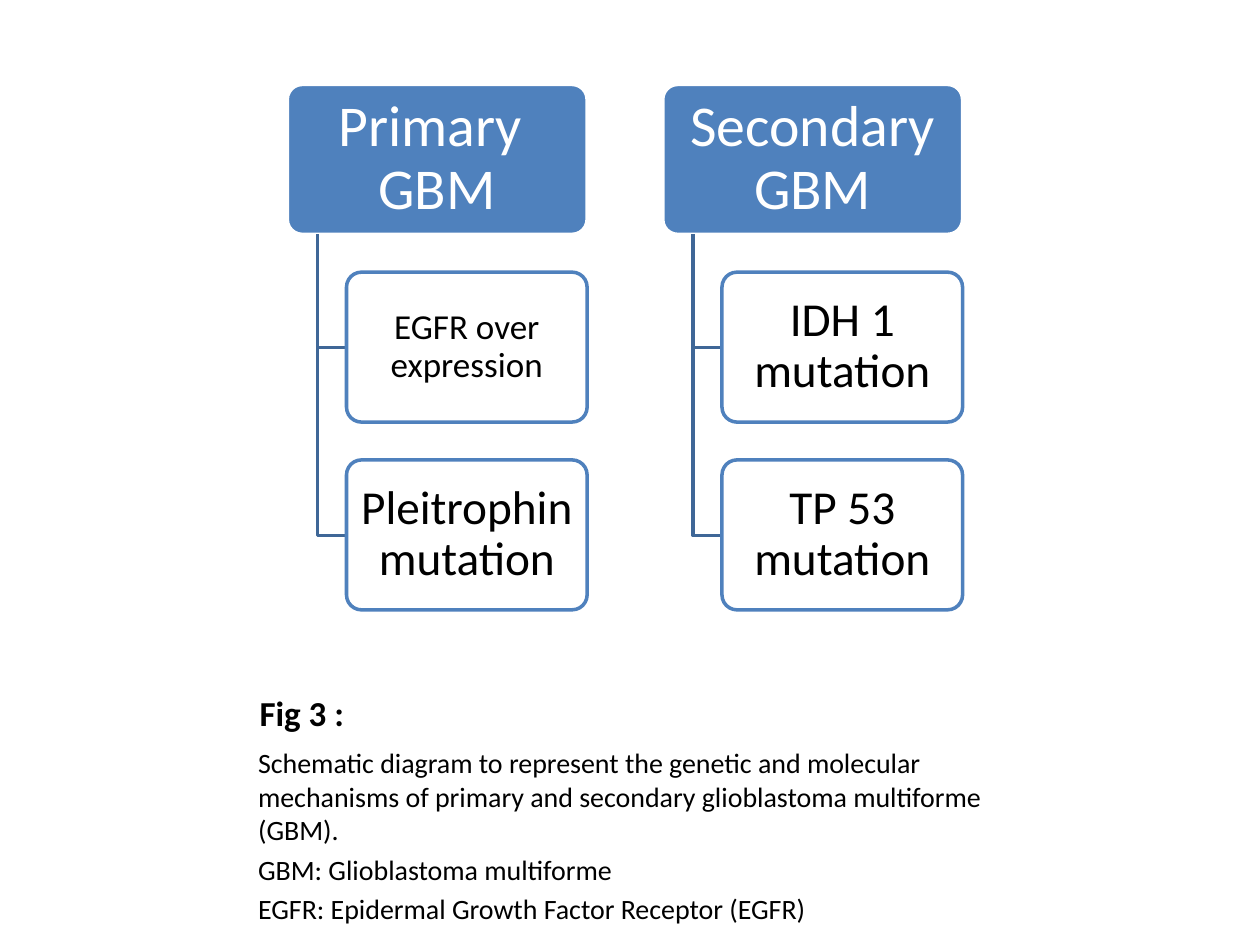
from pptx import Presentation
from pptx.dml.color import RGBColor
from pptx.enum.shapes import MSO_SHAPE
from pptx.enum.text import MSO_ANCHOR, MSO_AUTO_SIZE, PP_ALIGN
from pptx.util import Emu, Pt

BLUE, DARK_BLUE, WHITE, BLACK = "4F81BD", "3F6797", "FFFFFF", "000000"
BRANCHES = [
    (" Primary GBM", [("EGFR over expression", 20), ("Pleitrophin mutation", 27)]),
    ("Secondary GBM", [("IDH 1 mutation", 27), ("TP 53 mutation", 27)]),
]
CAPTION = [
    "Schematic diagram to represent the genetic and molecular mechanisms of "
    "primary and secondary glioblastoma multiforme (GBM).",
    "GBM: Glioblastoma multiforme",
    "EGFR: Epidermal Growth Factor Receptor (EGFR)",
]


def px(n):
    return Emu(n * 9144)


def rgb(value):
    return RGBColor.from_string(value)


class Deck:
    """Holds the style and the current slide, and adds each kind of element."""

    font = "Calibri"
    line_width = Pt(2)

    def __init__(self, width, height):
        self.prs = Presentation()
        self.prs.slide_width, self.prs.slide_height = px(width), px(height)
        self.s = self.prs.slides.add_slide(self.prs.slide_layouts[5])

    def run(self, p, text, size, color, bold=False):
        r = p.add_run()
        r.text = text
        r.font.name, r.font.size, r.font.bold = self.font, Pt(size), bold
        r.font.color.rgb = rgb(color)

    def title(self, x, y, w, h, text, size):
        sp = self.s.shapes.title
        sp.left, sp.top, sp.width, sp.height = px(x), px(y), px(w), px(h)
        tf = sp.text_frame
        tf.word_wrap, tf.auto_size = True, MSO_AUTO_SIZE.NONE
        tf.vertical_anchor = MSO_ANCHOR.BOTTOM
        p = tf.paragraphs[0]
        p.alignment = PP_ALIGN.LEFT
        self.run(p, text, size, BLACK, bold=True)

    def caption(self, x, y, w, h, lines, size):
        tf = self.s.shapes.add_textbox(px(x), px(y), px(w), px(h)).text_frame
        tf.word_wrap = True
        for i, line in enumerate(lines):
            p = tf.add_paragraph() if i else tf.paragraphs[0]
            p.space_before = Pt(size * 0.2)
            self.run(p, line, size, BLACK)

    def box(self, x, y, w, h, text, size, fill, line, color):
        sp = self.s.shapes.add_shape(
            MSO_SHAPE.ROUNDED_RECTANGLE, px(x), px(y), px(w), px(h))
        sp.adjustments[0] = 0.1
        sp.shadow.inherit = False
        sp.fill.solid()
        sp.fill.fore_color.rgb = rgb(fill)
        sp.line.color.rgb, sp.line.width = rgb(line), self.line_width
        tf = sp.text_frame
        tf.word_wrap, tf.vertical_anchor = True, MSO_ANCHOR.MIDDLE
        tf.margin_left = tf.margin_right = px(5)
        tf.margin_top = tf.margin_bottom = px(4)
        p = tf.paragraphs[0]
        p.alignment, p.line_spacing = PP_ALIGN.CENTER, 0.9
        p._p.get_or_add_pPr().set("rtl", "1")
        self.run(p, text, size, color)

    def elbow(self, x, y, w, h):
        builder = self.s.shapes.build_freeform(px(x), px(y))
        builder.add_line_segments(
            [(px(x), px(y + h)), (px(x + w), px(y + h))], close=False)
        sp = builder.convert_to_shape()
        sp.shadow.inherit = False
        sp.fill.background()
        sp.line.color.rgb, sp.line.width = rgb(DARK_BLUE), self.line_width

    def branch(self, x, y, heading, children):
        w, h, pitch, indent, stem = 238, 119, 149, 47, 24
        self.box(x, y, w, h, heading, 33, BLUE, WHITE, WHITE)
        for i, (text, size) in enumerate(children, 1):
            top = y + i * pitch
            self.elbow(x + stem, y + h, indent - stem, top - y - h // 2)
            self.box(x + indent, top, 191, h, text, size, WHITE, BLUE, BLACK)


def main():
    deck = Deck(1000, 750)
    deck.title(196, 525, 600, 62, "Fig 3 :", 20)
    deck.caption(195, 587, 601, 77, CAPTION, 16)
    for i, (heading, children) in enumerate(BRANCHES):
        deck.branch(228 + i * 298, 67, heading, children)
    deck.prs.save("out.pptx")


if __name__ == "__main__":
    main()
